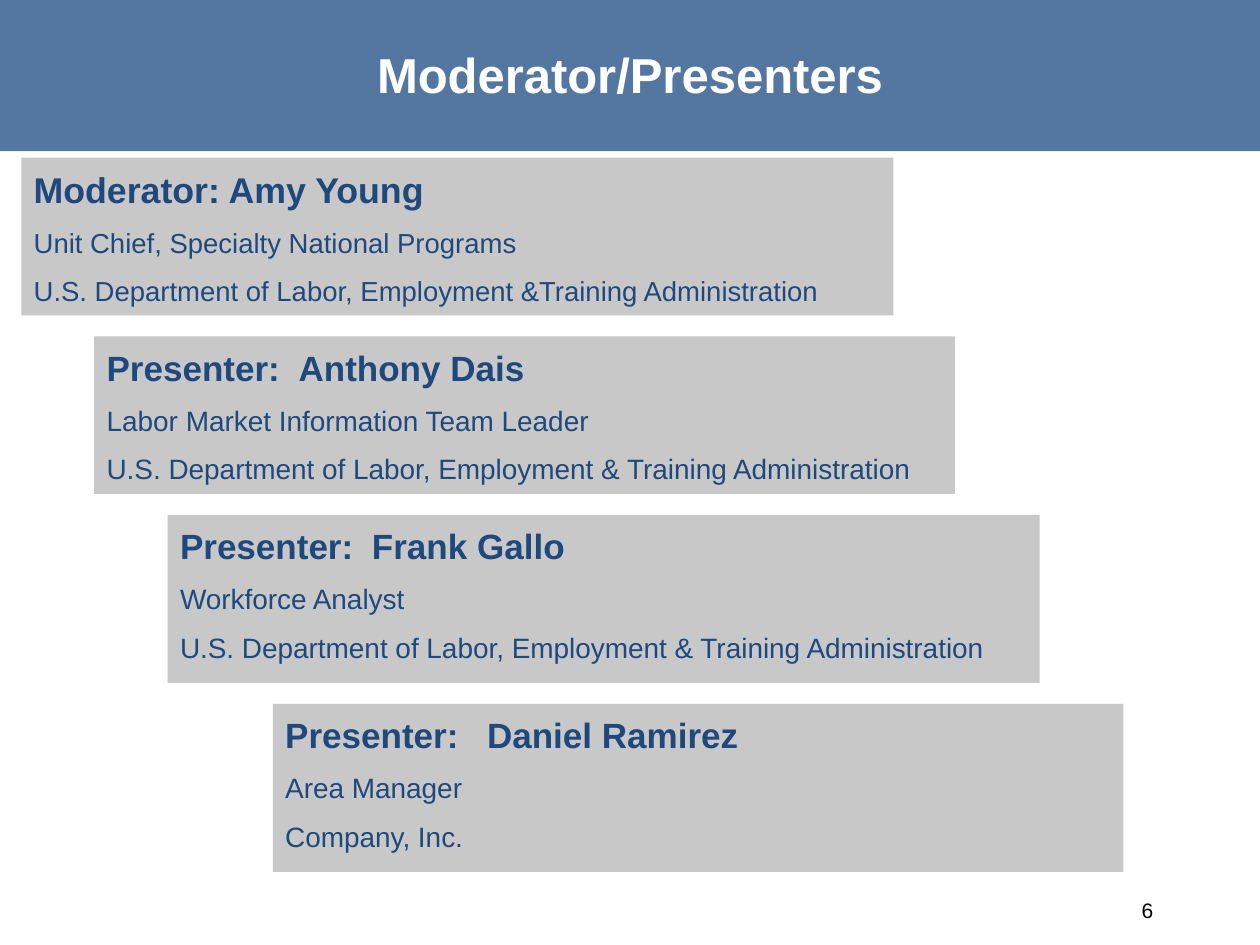
"""Build the Moderator/Presenters slide with its staircase of speaker cards."""
from dataclasses import dataclass

from lxml import etree
from pptx import Presentation
from pptx.dml.color import RGBColor
from pptx.enum.shapes import MSO_SHAPE
from pptx.enum.text import MSO_ANCHOR, PP_ALIGN
from pptx.oxml.ns import qn
from pptx.util import Cm, Pt

RECT = MSO_SHAPE.RECTANGLE
TOP, MIDDLE = MSO_ANCHOR.TOP, MSO_ANCHOR.MIDDLE
LEFT, CENTER, RIGHT = PP_ALIGN.LEFT, PP_ALIGN.CENTER, PP_ALIGN.RIGHT
BAND, CARD, NAVY, WHITE, BLACK = "376092", "BFBFBF", "1F497D", "FFFFFF", "000000"
OPACITY = 85
FIRST_TOP, GAP = 3.18, 0.42


@dataclass
class Speaker:
    left: float
    width: float
    height: float
    heading: str
    lines: tuple[str, str]
    tab: float = 0
    heading_size: float = 20
    line_size: float = 16


AGENCY = "U.S. Department of Labor, Employment & Training Administration"
SPEAKERS = [
    Speaker(0.43, 17.58, 3.18, "Moderator: Amy Young",
            ("Unit Chief, Specialty National Programs",
             "U.S. Department of Labor, Employment &Training Administration"),
            heading_size=20.4, line_size=15.7),
    Speaker(1.9, 17.35, 3.18, "Presenter:\tAnthony Dais",
            ("Labor Market Information Team Leader", AGENCY), tab=3.87),
    Speaker(3.38, 17.58, 3.39, "Presenter:\tFrank Gallo",
            ("Workforce Analyst", AGENCY), tab=3.87),
    Speaker(5.5, 17.15, 3.39, "Presenter:\tDaniel Ramirez",
            ("Area Manager", "Company, Inc."), tab=4.07),
]


def rgb(value: str) -> RGBColor:
    """Return the colour for a hex string."""
    return RGBColor.from_string(value)


def add_panel(s, left: float, top: float, width: float, height: float, color: str):
    """Add a translucent rectangle without outline or shadow."""
    sp = s.shapes.add_shape(RECT, Cm(left), Cm(top), Cm(width), Cm(height))
    sp.shadow.inherit = False
    sp.line.fill.background()
    sp.fill.solid()
    sp.fill.fore_color.rgb = rgb(color)
    clr = sp._element.spPr.find(qn("a:solidFill")).find(qn("a:srgbClr"))
    etree.SubElement(clr, qn("a:alpha"), val=str(OPACITY * 1000))
    return sp


def add_run(p, text: str, size: float, color: str, bold: bool = False) -> None:
    """Add a formatted run to a paragraph."""
    r = p.add_run()
    r.text = text
    for name, value in {"name": "Arial", "size": Pt(size), "bold": bold}.items():
        setattr(r.font, name, value)
    r.font.color.rgb = rgb(color)


def add_label(s, left: float, top: float, width: float, height: float, text: str,
              size: float, color: str, align: PP_ALIGN, bold: bool = False) -> None:
    """Add a vertically centred one-line text box."""
    tf = s.shapes.add_textbox(Cm(left), Cm(top), Cm(width), Cm(height)).text_frame
    for name, value in {"word_wrap": True, "vertical_anchor": MIDDLE}.items():
        setattr(tf, name, value)
    p = tf.paragraphs[0]
    p.alignment = align
    add_run(p, text, size, color, bold)


def add_tab(p, position: float) -> None:
    """Add a left tab stop to a paragraph."""
    tabs = etree.SubElement(p._p.get_or_add_pPr(), qn("a:tabLst"))
    etree.SubElement(tabs, qn("a:tab"), pos=str(int(Cm(position))), algn="l")


def add_speaker(s, speaker: Speaker, top: float) -> None:
    """Add one speaker card with a bold heading and two lines."""
    sp = add_panel(s, speaker.left, top, speaker.width, speaker.height, CARD)
    tf = sp.text_frame
    for name, value in {"word_wrap": True, "vertical_anchor": TOP,
                        "margin_top": Cm(0.2)}.items():
        setattr(tf, name, value)
    for i, text in enumerate((speaker.heading, *speaker.lines)):
        p = tf.add_paragraph() if i else tf.paragraphs[0]
        if i == 0 and speaker.tab:
            add_tab(p, speaker.tab)
        for name, value in {"alignment": LEFT, "space_before": Pt(4.3 if i else 0),
                            "space_after": Pt(4.3)}.items():
            setattr(p, name, value)
        size = speaker.line_size if i else speaker.heading_size
        add_run(p, text, size, NAVY, bold=i == 0)


def main() -> None:
    """Build and save the slide."""
    prs = Presentation()
    prs.slide_width, prs.slide_height = Cm(25.4), Cm(19.05)
    s = prs.slides.add_slide(prs.slide_layouts[6])
    add_panel(s, 0, 0, 25.4, 3.05, BAND)
    add_label(s, 0, 0, 25.4, 3, "Moderator/Presenters", 28, WHITE, CENTER, bold=True)
    top = FIRST_TOP
    for speaker in SPEAKERS:
        add_speaker(s, speaker, top)
        top += speaker.height + GAP
    add_label(s, 17.58, 17.83, 5.92, 1.02, "6", 12, BLACK, RIGHT)
    prs.save("out.pptx")


if __name__ == "__main__":
    main()
